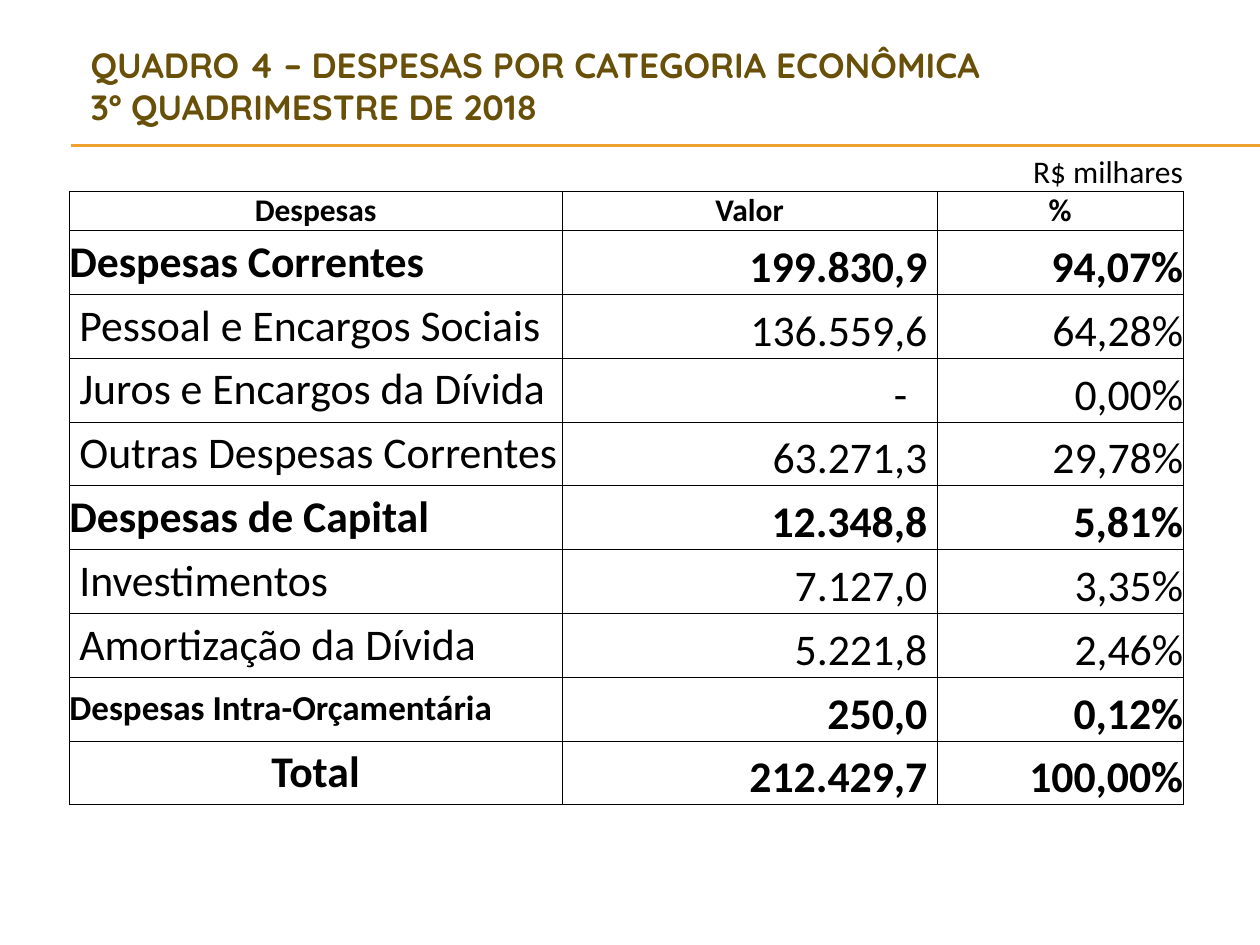
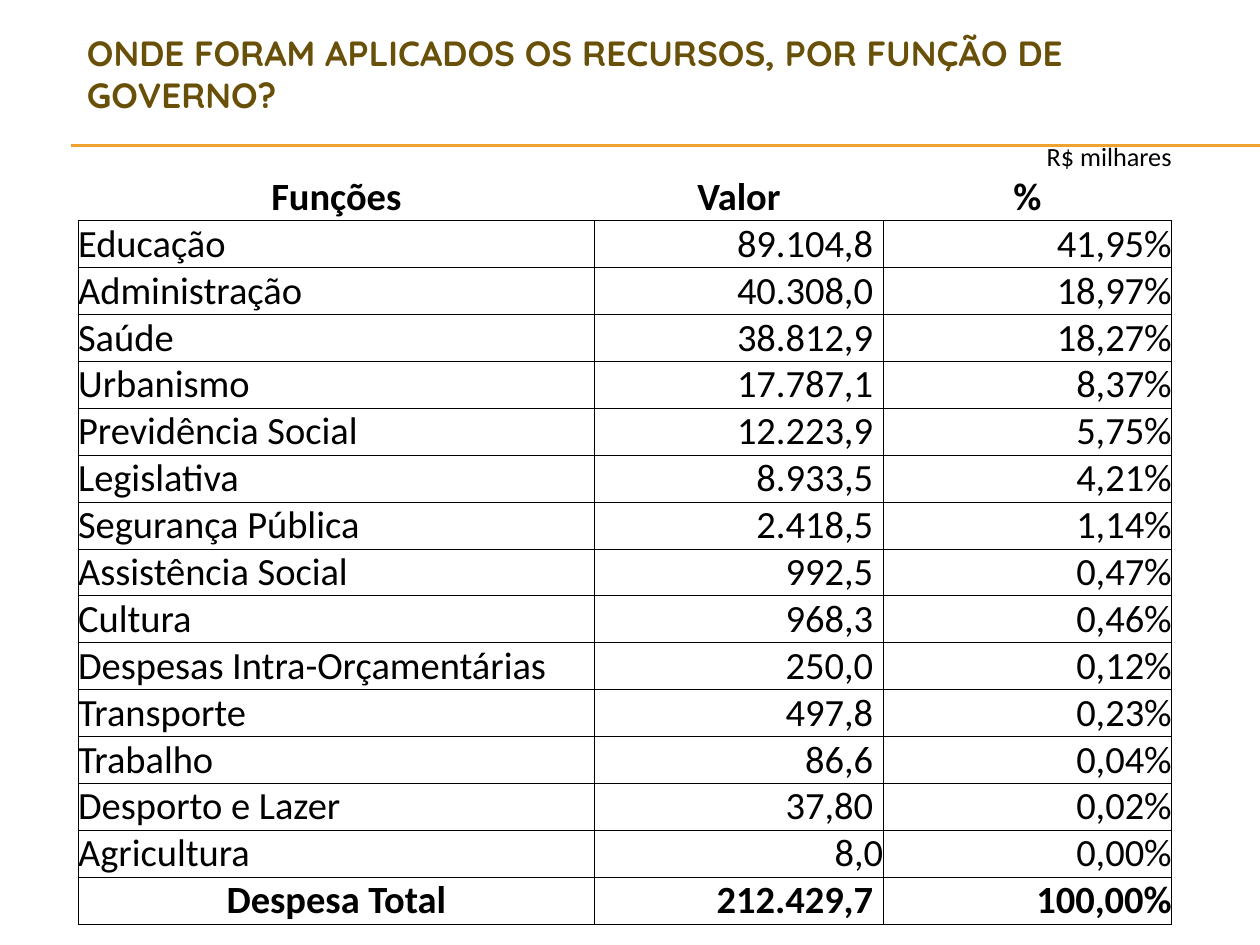
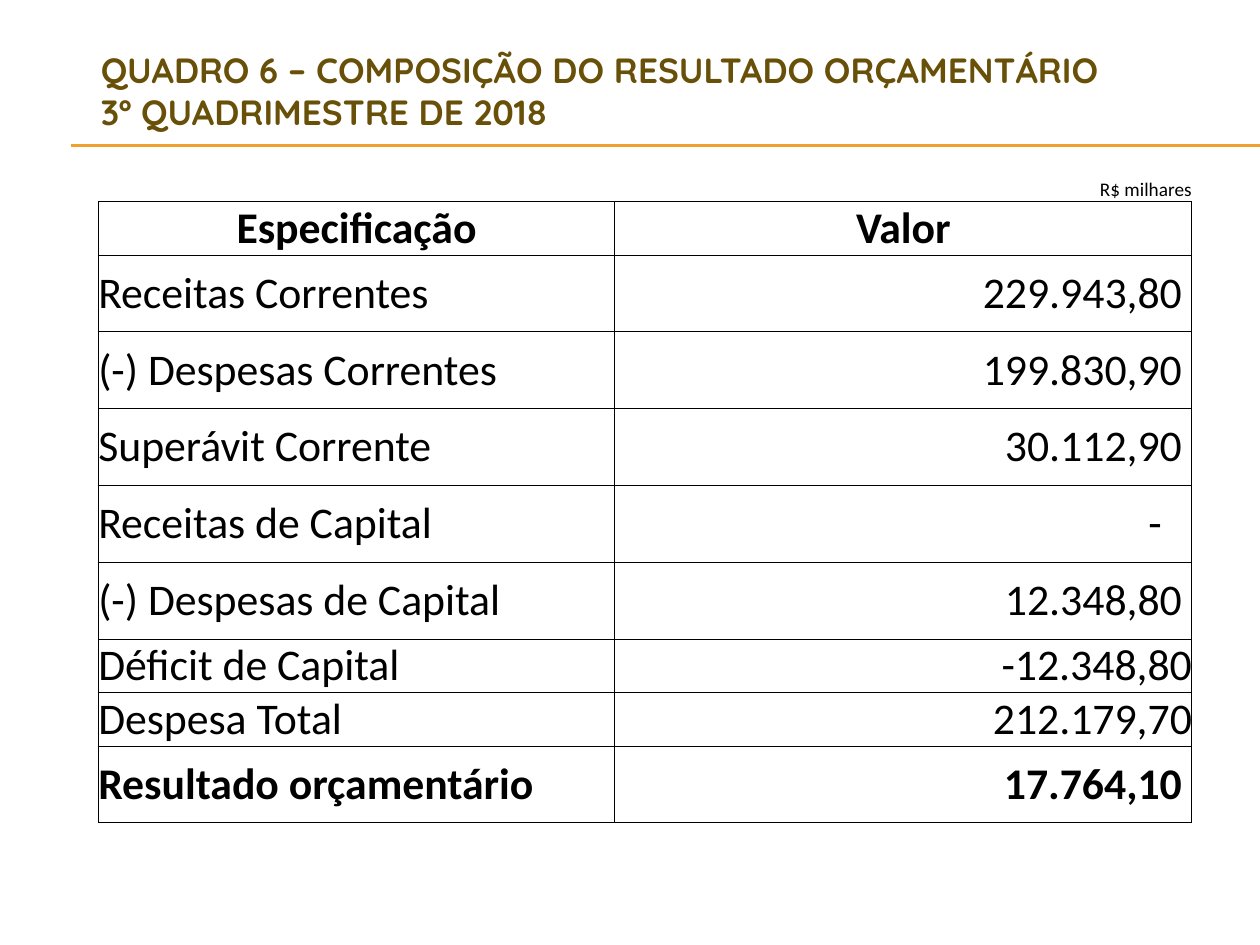
from dataclasses import dataclass

from lxml.etree import SubElement
from pptx import Presentation
from pptx.dml.color import RGBColor
from pptx.enum.shapes import MSO_CONNECTOR
from pptx.enum.text import MSO_ANCHOR, MSO_AUTO_SIZE, PP_ALIGN
from pptx.oxml.ns import qn
from pptx.util import Inches, Pt


@dataclass(frozen=True)
class Theme:
    """Colours, fonts and sizes shared by every slide."""
    title_color: str = "695008"
    rule_color: str = "F0A22E"
    ink: str = "000000"
    title_font: str = "Quicksand"
    body_font: str = "Calibri"
    title_size: int = 20
    rule_width: float = 0.75
    border_width: float = 0.5
    number_gap: float = 0.08
    dash_gap: float = 0.24


@dataclass(frozen=True)
class Entry:
    """One line of a table: a label and its figures."""
    label: str
    figures: tuple
    bold: bool = False
    indent: float = 0
    centered: bool = False
    label_size: int = 0
    flush: bool = False


@dataclass(frozen=True)
class Grid:
    """Geometry and type of one table."""
    at: tuple
    columns: tuple
    heights: tuple
    unit_size: int
    header_size: int
    body_size: int
    label_anchor: MSO_ANCHOR
    figure_anchor: MSO_ANCHOR
    merged_value: bool = False
    boxed_header: bool = True


THEME = Theme()
UNIT = "R$ milhares"
MIDDLE, BOTTOM = MSO_ANCHOR.MIDDLE, MSO_ANCHOR.BOTTOM
LEFT, CENTER, RIGHT = PP_ALIGN.LEFT, PP_ALIGN.CENTER, PP_ALIGN.RIGHT
ALL_SIDES = "LRTB"

CATEGORY_GRID = Grid((0.55, 1.02), (3.91, 0.03, 2.94, 1.95),
                     (0.5, 0.31) + (4.56 / 9,) * 9, 18, 18, 25,
                     MIDDLE, BOTTOM, merged_value=True)
CATEGORIES = (
    Entry("Despesas Correntes", ("199.830,9", "94,07%"), bold=True),
    Entry("Pessoal e Encargos Sociais", ("136.559,6", "64,28%"), indent=0.08),
    Entry("Juros e Encargos da Dívida", ("-", "0,00%"), indent=0.08),
    Entry("Outras Despesas Correntes", ("63.271,3", "29,78%"), indent=0.08),
    Entry("Despesas de Capital", ("12.348,8", "5,81%"), bold=True),
    Entry("Investimentos", ("7.127,0", "3,35%"), indent=0.08),
    Entry("Amortização da Dívida", ("5.221,8", "2,46%"), indent=0.08),
    Entry("Despesas Intra-Orçamentária", ("250,0", "0,12%"), bold=True, label_size=20),
    Entry("Total", ("212.429,7", "100,00%"), bold=True, centered=True),
)

FUNCTION_GRID = Grid((0.62, 1.02), (4.1, 2.29, 2.29),
                     (0.36,) + (0.37,) * 16, 15, 22, 22,
                     BOTTOM, BOTTOM, boxed_header=False)
FUNCTIONS = (
    Entry("Educação", ("89.104,8", "41,95%")),
    Entry("Administração", ("40.308,0", "18,97%")),
    Entry("Saúde", ("38.812,9", "18,27%")),
    Entry("Urbanismo", ("17.787,1", "8,37%")),
    Entry("Previdência Social", ("12.223,9", "5,75%")),
    Entry("Legislativa", ("8.933,5", "4,21%")),
    Entry("Segurança Pública", ("2.418,5", "1,14%")),
    Entry("Assistência Social", ("992,5", "0,47%")),
    Entry("Cultura", ("968,3", "0,46%")),
    Entry("Despesas Intra-Orçamentárias", ("250,0", "0,12%")),
    Entry("Transporte", ("497,8", "0,23%")),
    Entry("Trabalho", ("86,6", "0,04%")),
    Entry("Desporto e Lazer", ("37,80", "0,02%")),
    Entry("Agricultura", ("8,0", "0,00%"), flush=True),
    Entry("Despesa Total", ("212.429,7", "100,00%"), bold=True, centered=True),
)

RESULT_GRID = Grid((0.78, 1.25), (4.1, 2.29, 2.29),
                   (0.35, 0.42) + (0.61,) * 5 + (0.42,) * 2 + (0.61,), 11, 25, 25,
                   MIDDLE, MIDDLE, merged_value=True)
RESULTS = (
    Entry("Receitas Correntes", ("229.943,80",)),
    Entry("(-) Despesas Correntes", ("199.830,90",)),
    Entry("Superávit Corrente", ("30.112,90",)),
    Entry("Receitas de Capital", ("-",)),
    Entry("(-) Despesas de Capital", ("12.348,80",)),
    Entry("Déficit de Capital", ("-12.348,80",), flush=True),
    Entry("Despesa Total", ("212.179,70",), flush=True),
    Entry("Resultado orçamentário", ("17.764,10",), bold=True),
)


def add_span(para, text, font, size, color, bold):
    """Add one formatted run."""
    span = para.add_run()
    span.text = text
    span.font.name = font
    span.font.size = Pt(size)
    span.font.bold = bold
    span.font.color.rgb = RGBColor.from_string(color)


def add_rules(page):
    """Draw the double rule under the title."""
    for top in (1.15, 1.16):
        rule = page.shapes.add_connector(
            MSO_CONNECTOR.STRAIGHT, Inches(0.56), Inches(top), Inches(10), Inches(top))
        rule.line.color.rgb = RGBColor.from_string(THEME.rule_color)
        rule.line.width = Pt(THEME.rule_width)
        SubElement(rule.element.spPr, qn("a:effectLst"))


def set_title(page, lines, at):
    """Place and fill the title placeholder."""
    box = page.shapes.title
    box.left, box.top, box.width, box.height = (Inches(length) for length in at)
    frame = box.text_frame
    frame.word_wrap = True
    frame.auto_size = MSO_AUTO_SIZE.NONE
    frame.vertical_anchor = MIDDLE
    para = frame.paragraphs[0]
    para.alignment = LEFT
    for index, line in enumerate(lines):
        if index:
            para.add_line_break()
        add_span(para, line, THEME.title_font, THEME.title_size, THEME.title_color, True)


def set_borders(cell, sides):
    """Draw the named sides of a cell and clear the others."""
    properties = cell._tc.get_or_add_tcPr()
    for position, side in enumerate(ALL_SIDES):
        edge = properties.makeelement(qn(f"a:ln{side}"), {"w": str(Pt(THEME.border_width))})
        if side in sides:
            fill = SubElement(edge, qn("a:solidFill"))
            SubElement(fill, qn("a:srgbClr"), val=THEME.ink)
        else:
            SubElement(edge, qn("a:noFill"))
        properties.insert(position, edge)


def set_cell(cell, text, size, align, anchor, bold=False, indent=0, gap=0):
    """Write one table cell."""
    cell.vertical_anchor = anchor
    cell.margin_left, cell.margin_right = Inches(indent), Inches(gap)
    para = cell.text_frame.paragraphs[0]
    para.alignment = align
    add_span(para, text, THEME.body_font, size, THEME.ink, bold)


def add_empty_table(page, grid):
    """Add a plain table with its borders and merged value cells."""
    left, top = grid.at
    frame = page.shapes.add_table(
        len(grid.heights), len(grid.columns), Inches(left), Inches(top),
        Inches(sum(grid.columns)), Inches(sum(grid.heights)))
    table = frame.table
    table.first_row = table.horz_banding = False
    for column, width in zip(table.columns, grid.columns):
        column.width = Inches(width)
    for index, (row, height) in enumerate(zip(table.rows, grid.heights)):
        row.height = Inches(height)
        sides = ALL_SIDES
        if index == 0:
            sides = "B" if grid.boxed_header else ""
        elif index == 1 and not grid.boxed_header:
            sides = "B"
        for cell in row.cells:
            cell.margin_left = cell.margin_right = 0
            cell.margin_top = cell.margin_bottom = 0
            cell.fill.background()
            set_borders(cell, sides)
        if index and grid.merged_value:
            table.cell(index, 1).merge(table.cell(index, 2))
    return table


def figure_gap(figure, column, entry):
    """Return the space to the right of a figure."""
    if column > 1 or entry.flush:
        return 0
    return THEME.dash_gap if figure == "-" else THEME.number_gap


def add_budget_table(page, grid, headings, entries):
    """Build a table with its unit note, headings and entries."""
    table = add_empty_table(page, grid)
    last = len(grid.columns) - 1
    places = (0, 1, last)[:len(headings)]
    set_cell(table.cell(0, last), UNIT, grid.unit_size, RIGHT, BOTTOM)
    for column, heading in zip(places, headings):
        set_cell(table.cell(1, column), heading, grid.header_size, CENTER, MIDDLE, True)
    for row, entry in enumerate(entries, start=2):
        set_cell(table.cell(row, 0), entry.label, entry.label_size or grid.body_size,
                 CENTER if entry.centered else LEFT, grid.label_anchor,
                 entry.bold, entry.indent)
        for column, figure in zip(places[1:], entry.figures):
            set_cell(table.cell(row, column), figure, grid.body_size, RIGHT,
                     grid.figure_anchor, entry.bold, gap=figure_gap(figure, column, entry))


def add_page(deck, title, title_at, grid, headings, entries):
    """Add one slide with its title, rules and table."""
    page = deck.slides.add_slide(deck.slide_layouts[5])
    add_rules(page)
    set_title(page, title, title_at)
    add_budget_table(page, grid, headings, entries)


def main():
    """Build and save the deck."""
    deck = Presentation()
    deck.slide_width, deck.slide_height = Inches(10), Inches(7.5)
    add_page(deck, ("QUADRO 4 – DESPESAS POR CATEGORIA ECONÔMICA",
                    "3º QUADRIMESTRE DE 2018"),
             (0.62, 0.39, 8.5, 0.58), CATEGORY_GRID,
             ("Despesas", "Valor", "%"), CATEGORIES)
    add_page(deck, ("ONDE FORAM APLICADOS OS RECURSOS, POR FUNÇÃO DE GOVERNO?",),
             (0.59, 0.21, 8.5, 0.74), FUNCTION_GRID,
             ("Funções", "Valor", "%"), FUNCTIONS)
    add_page(deck, ("QUADRO 6 – COMPOSIÇÃO DO RESULTADO ORÇAMENTÁRIO",
                    "3º QUADRIMESTRE DE 2018"),
             (0.7, 0.55, 8.5, 0.33), RESULT_GRID,
             ("Especificação", "Valor"), RESULTS)
    deck.save("out.pptx")


if __name__ == "__main__":
    main()
